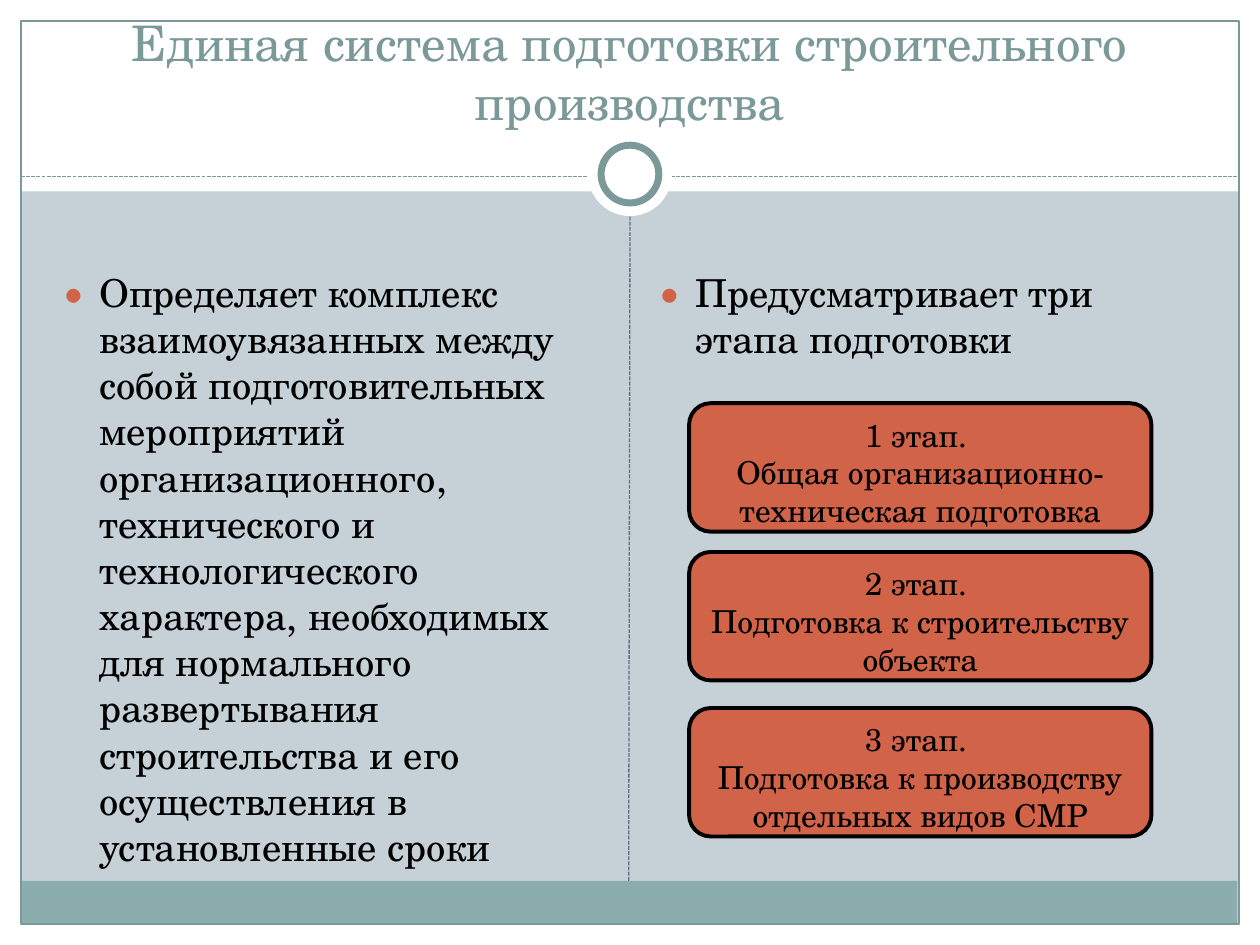
import lxml.etree
import pptx
import pptx.dml.color
import pptx.enum.dml
import pptx.enum.shapes
import pptx.enum.text
import pptx.oxml.ns
import pptx.util

Pt = pptx.util.Pt
RGBColor = pptx.dml.color.RGBColor
Shape = pptx.enum.shapes.MSO_SHAPE
Anchor = pptx.enum.text.MSO_ANCHOR
Align = pptx.enum.text.PP_ALIGN
qn = pptx.oxml.ns.qn

FONT = "TeX Gyre Schola"
BACKGROUND = RGBColor(0xC5, 0xD1, 0xD7)
WHITE = RGBColor(0xFF, 0xFF, 0xFF)
BLACK = RGBColor(0x00, 0x00, 0x00)
TEAL = RGBColor(0x7C, 0x99, 0x9A)
FOOTER_TEAL = RGBColor(0x8C, 0xAD, 0xAE)
SLATE = RGBColor(0x64, 0x6B, 0x86)
ORANGE = RGBColor(0xD1, 0x63, 0x49)

WIDTH, HEIGHT, MARGIN = 720, 540, 12
TITLE = "Единая система подготовки строительного производства"
DEFINITION = (
    "Определяет комплекс взаимоувязанных между собой подготовительных "
    "мероприятий организационного, технического и технологического характера, "
    "необходимых для нормального развертывания строительства и его "
    "осуществления в установленные сроки"
)
STAGES_INTRODUCTION = "Предусматривает три этапа подготовки"
STAGES = [
    (230.4, "1 этап. ", "Общая организационно-техническая подготовка"),
    (315.4, "2 этап. ", "Подготовка к строительству объекта"),
    (404.6, "3 этап. ", "Подготовка к производству отдельных видов СМР"),
]


def add_box(slide, kind, box, fill=None, line=None, line_width=0.75):
    """Add a flat preset shape in the given box."""
    shape = slide.shapes.add_shape(kind, *map(Pt, box))
    shape.shadow.inherit = False
    if fill is None:
        shape.fill.background()
    else:
        shape.fill.solid()
        shape.fill.fore_color.rgb = fill
    if line is None:
        shape.line.fill.background()
    else:
        shape.line.color.rgb = line
        shape.line.width = Pt(line_width)
    return shape


def add_dashed_line(slide, start, end, color):
    """Add a thin dashed line between two points."""
    connector = slide.shapes.add_connector(
        pptx.enum.shapes.MSO_CONNECTOR.STRAIGHT, *map(Pt, start + end)
    )
    connector.line.color.rgb = color
    connector.line.width = Pt(0.75)
    connector.line.dash_style = pptx.enum.dml.MSO_LINE.SQUARE_DOT
    properties = connector.element.find(qn("p:spPr"))
    lxml.etree.SubElement(properties, qn("a:effectLst"))
    return connector


def add_run(paragraph, text, size, color):
    """Add one formatted run to a paragraph."""
    run = paragraph.add_run()
    run.text = text
    run.font.name = FONT
    run.font.size = Pt(size)
    run.font.color.rgb = color


def add_frame(slide, box):
    """Draw the white margins, footer bar, border, ring and dividers."""
    left, top, width, height = box
    right, bottom = left + width, top + height
    middle, ring_middle, footer_top = left + width / 2, top + 99.5, bottom - 36.7
    inner_width = width - 2 * MARGIN
    for margin_box in (
        (left, bottom - MARGIN, width, MARGIN),
        (left, top, width, 109.4),
        (left, top, MARGIN, height),
        (right - MARGIN, top, MARGIN, height),
    ):
        add_box(slide, Shape.RECTANGLE, margin_box, WHITE)
    footer = add_box(
        slide, Shape.RECTANGLE, (left + 11.5, footer_top, 695.5, 24.7), FOOTER_TEAL
    )
    border = (left + MARGIN, top + MARGIN, inner_width, height - 2 * MARGIN)
    add_box(slide, Shape.RECTANGLE, border, line=TEAL)
    add_dashed_line(
        slide, (left + MARGIN, top + 100.8), (right - MARGIN, top + 100.8), TEAL
    )
    for diameter, line in ((48, None), (33, TEAL)):
        ring_box = (middle - diameter / 2, ring_middle - diameter / 2, diameter, diameter)
        add_box(slide, Shape.OVAL, ring_box, WHITE, line, 4)
    divider = add_dashed_line(
        slide, (middle - 0.7, footer_top), (middle, ring_middle + 24), SLATE
    )
    divider.begin_connect(footer, 0)


def place_placeholder(slide, placeholder, box, anchor):
    """Move a placeholder to the front and into the given box."""
    slide.shapes.element.append(placeholder.element)
    placeholder.left, placeholder.top, placeholder.width, placeholder.height = map(Pt, box)
    frame = placeholder.text_frame
    frame.word_wrap = True
    frame.auto_size = pptx.enum.text.MSO_AUTO_SIZE.NONE
    frame.vertical_anchor = anchor
    return frame.paragraphs[0]


def fill_title(slide, box):
    """Write the slide title at the bottom of its box."""
    paragraph = place_placeholder(slide, slide.shapes.title, box, Anchor.BOTTOM)
    paragraph.alignment = Align.CENTER
    add_run(paragraph, TITLE, 28, TEAL)


def fill_bullet(slide, placeholder, box, text):
    """Write one bulleted paragraph into a body placeholder."""
    paragraph = place_placeholder(slide, placeholder, box, Anchor.TOP)
    paragraph.space_before = Pt(0)
    properties = paragraph._p.get_or_add_pPr()
    properties.set("marL", str(Pt(21.6)))
    properties.set("indent", str(Pt(-21.6)))
    bullet_color = lxml.etree.SubElement(properties, qn("a:buClr"))
    lxml.etree.SubElement(bullet_color, qn("a:srgbClr"), val=str(ORANGE))
    lxml.etree.SubElement(properties, qn("a:buSzPct"), val="85000")
    lxml.etree.SubElement(properties, qn("a:buFont"), typeface=FONT)
    lxml.etree.SubElement(properties, qn("a:buChar"), char="●")
    add_run(paragraph, text, 22, BLACK)


def add_stage(slide, box, heading, description):
    """Add one rounded stage box with its heading and description."""
    shape = add_box(slide, Shape.ROUNDED_RECTANGLE, box, ORANGE, BLACK, 2.25)
    shape.adjustments[0] = 0.167
    frame = shape.text_frame
    frame.word_wrap = True
    frame.vertical_anchor = Anchor.TOP
    for paragraph, text in (
        (frame.paragraphs[0], heading),
        (frame.add_paragraph(), description),
    ):
        paragraph.alignment = Align.CENTER
        add_run(paragraph, text, 18, BLACK)


def main():
    """Build the slide and save it."""
    presentation = pptx.Presentation()
    presentation.slide_width, presentation.slide_height = Pt(WIDTH), Pt(HEIGHT)
    slide = presentation.slides.add_slide(presentation.slide_layouts[3])
    slide.background.fill.solid()
    slide.background.fill.fore_color.rgb = BACKGROUND
    definition, introduction = slide.placeholders[1], slide.placeholders[2]
    add_frame(slide, (0, 0, WIDTH, HEIGHT))
    fill_title(slide, (24, 18, 672, 60))
    fill_bullet(slide, definition, (28, 150, 329, 318), DEFINITION)
    fill_bullet(slide, introduction, (368.6, 150, 296.6, 75), STAGES_INTRODUCTION)
    for top, heading, description in STAGES:
        add_stage(slide, (393.8, top, 264.2, 73.4), heading, description)
    presentation.save("out.pptx")


if __name__ == "__main__":
    main()
